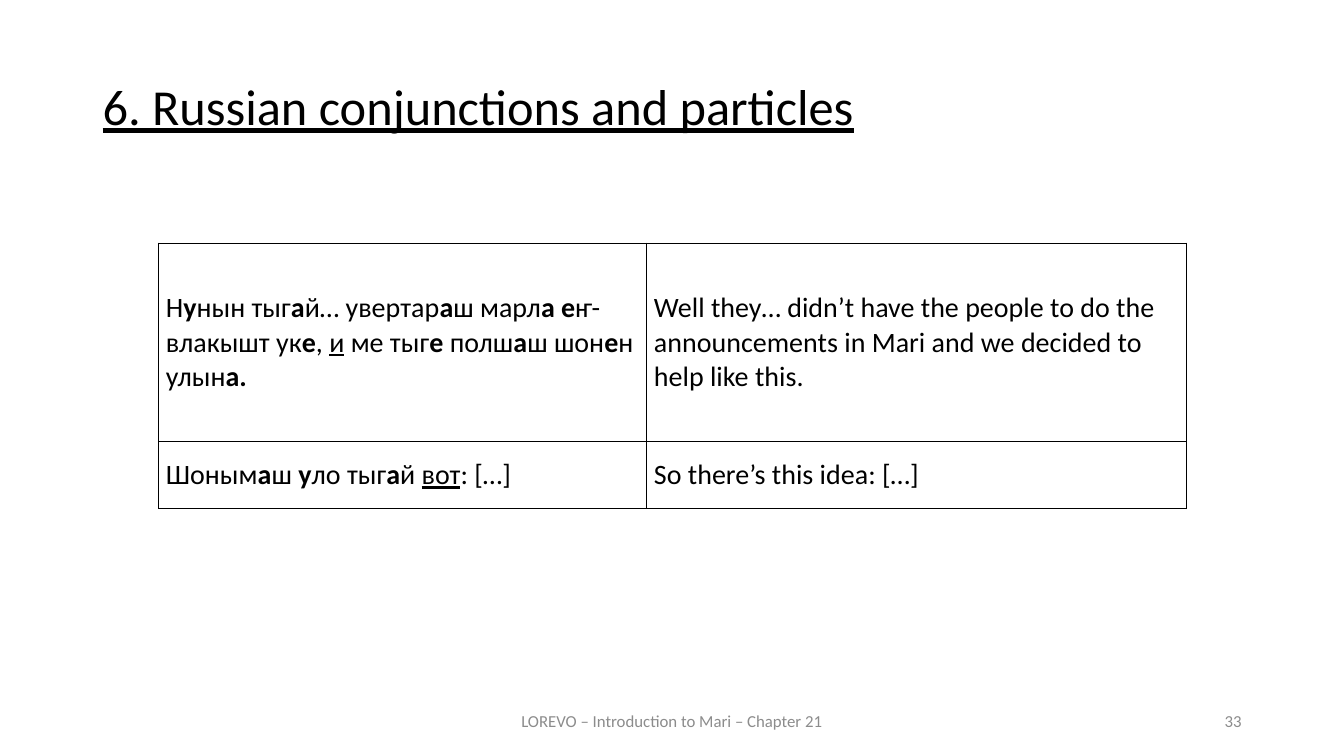
from dataclasses import dataclass

from lxml.etree import SubElement
from pptx import Presentation
from pptx.dml.color import RGBColor
from pptx.enum.text import MSO_ANCHOR as Anchor, MSO_AUTO_SIZE as AutoSize, PP_ALIGN as Align
from pptx.oxml.ns import qn
from pptx.util import Cm, Pt


@dataclass(frozen=True)
class Theme:
    font: str = "Calibri"
    ink: str = "000000"
    muted: str = "8C8C8C"
    paper: str = "FFFFFF"
    heading: int = 36
    body: int = 20
    small: int = 12
    rule: int = 1


THEME = Theme()
TITLE_ONLY = 5

# Pieces are split by "|"; a leading "*" makes one bold, "_" underlined.
EXAMPLES = [
    ("Н|*у|нын тыг|*а|й… увертар|*а|ш марл|*а е|ҥ-влакышт ук|*е|, |_и| ме тыг|*е |полш|*а|ш шон|*е|н улын|*а.",
     "Well they… didn’t have the people to do the announcements in Mari and we decided to help like this."),
    ("Шоным|*а|ш |*у|ло тыг|*а|й |_вот|: […]",
     "So there’s this idea: […]"),
]


def add_spans(para, marked, size, color):
    """Add one run for each piece of the marked text."""
    for piece in marked.split("|"):
        span = para.add_run()
        span.text = piece.lstrip("*_")
        span.font.name = THEME.font
        span.font.size = Pt(size)
        span.font.bold = piece.startswith("*")
        span.font.underline = piece.startswith("_")
        span.font.color.rgb = RGBColor.from_string(color)


def add_heading(page, box, text):
    title = page.shapes.title
    title.left, title.top, title.width, title.height = box
    frame = title.text_frame
    frame.word_wrap = True
    frame.auto_size = AutoSize.NONE
    frame.vertical_anchor = Anchor.TOP
    para = frame.paragraphs[0]
    para.alignment = Align.JUSTIFY
    para.line_spacing = 0.9
    para.space_before = Pt(12)
    add_spans(para, "_" + text, THEME.heading, THEME.ink)


def add_footer_text(page, box, text, alignment):
    frame = page.shapes.add_textbox(*box).text_frame
    frame.word_wrap = True
    frame.vertical_anchor = Anchor.MIDDLE
    para = frame.paragraphs[0]
    para.alignment = alignment
    add_spans(para, text, THEME.small, THEME.muted)


def add_borders(cell):
    properties = cell._tc.get_or_add_tcPr()
    for side in ("a:lnL", "a:lnR", "a:lnT", "a:lnB"):
        line = SubElement(properties, qn(side), w=str(Pt(THEME.rule)))
        fill = SubElement(line, qn("a:solidFill"))
        SubElement(fill, qn("a:srgbClr"), val=THEME.ink)


def add_examples(page, box, widths, heights):
    """Place the sentences beside their translations."""
    table = page.shapes.add_table(len(EXAMPLES), len(widths), *box).table
    table.first_row = table.horz_banding = False
    for column, width in zip(table.columns, widths):
        column.width = width
    for row, height, texts in zip(table.rows, heights, EXAMPLES):
        row.height = height
        for cell, text in zip(row.cells, texts):
            add_borders(cell)
            cell.fill.solid()
            cell.fill.fore_color.rgb = RGBColor.from_string(THEME.paper)
            cell.vertical_anchor = Anchor.MIDDLE
            cell.margin_left = cell.margin_right = Cm(0.18)
            cell.margin_top = cell.margin_bottom = 0
            add_spans(cell.text_frame.paragraphs[0], text, THEME.body, THEME.ink)


def main():
    deck = Presentation()
    deck.slide_width, deck.slide_height = Cm(33.87), Cm(19.05)
    page = deck.slides.add_slide(deck.slide_layouts[TITLE_ONLY])

    add_heading(page, (Cm(2.33), Cm(1.93), Cm(29.21), Cm(2.11)),
                "6. Russian conjunctions and particles")
    widths, heights = (Cm(12.3), Cm(13.6)), (Cm(5), Cm(1.68))
    add_examples(page, (Cm(4), Cm(6.13), sum(widths), sum(heights)), widths, heights)

    footer_top, footer_height = Cm(17.66), Cm(1.01)
    add_footer_text(page, (Cm(11.22), footer_top, Cm(11.43), footer_height),
                    "LOREVO – Introduction to Mari – Chapter 21", Align.CENTER)
    add_footer_text(page, (Cm(23.92), footer_top, Cm(7.62), footer_height),
                    "33", Align.RIGHT)
    deck.save("out.pptx")


if __name__ == "__main__":
    main()
